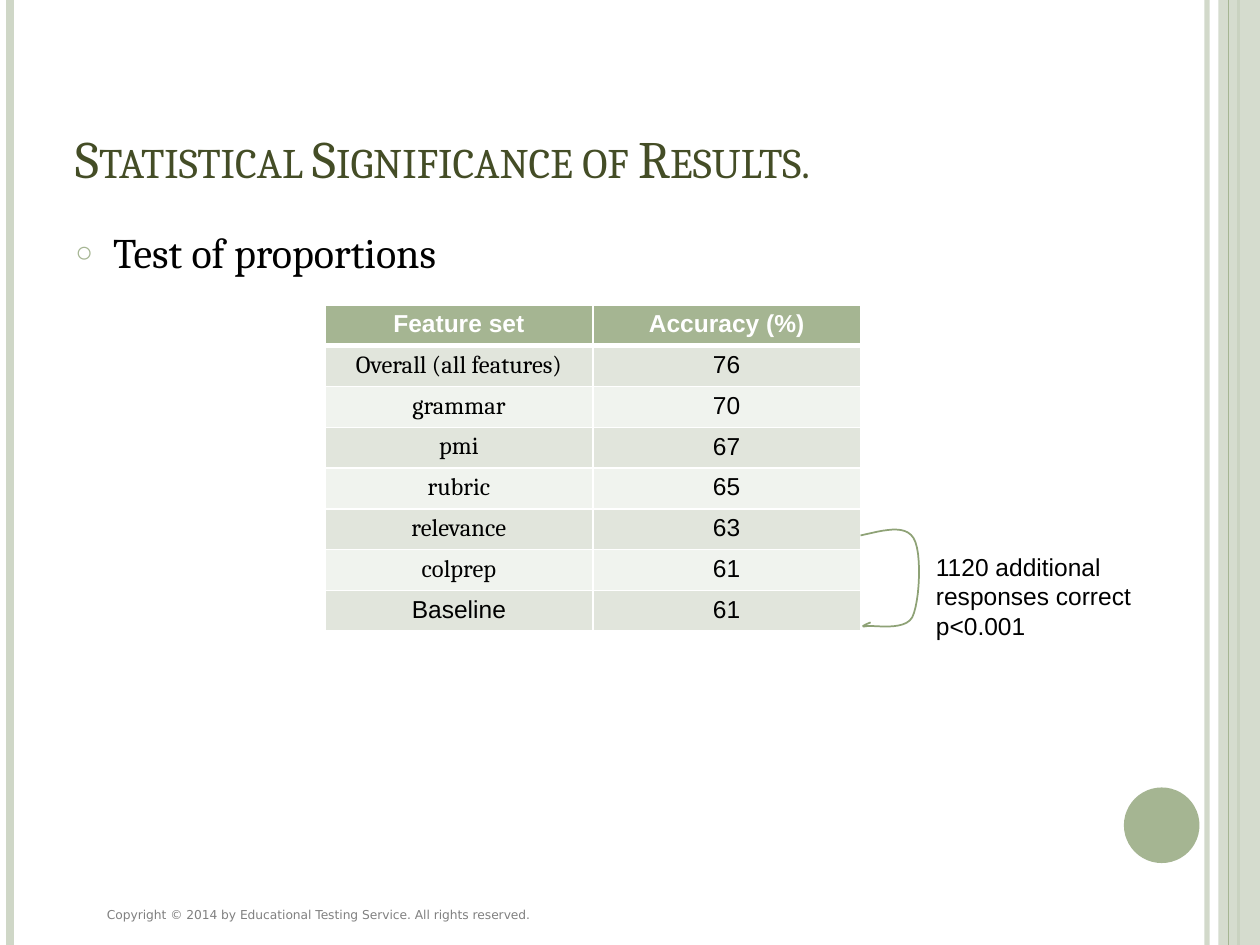
from lxml.etree import SubElement
from pptx import Presentation
from pptx.dml.color import RGBColor
from pptx.enum.shapes import MSO_CONNECTOR, MSO_SHAPE
from pptx.enum.text import MSO_ANCHOR, PP_ALIGN
from pptx.oxml.ns import qn
from pptx.util import Inches, Pt

SAGE = RGBColor(0xA5, 0xB5, 0x92)
PALE_SAGE = RGBColor(0xCF, 0xD7, 0xC7)
OLIVE = RGBColor(0x44, 0x4D, 0x26)
ARROW_GREEN = RGBColor(0x8E, 0xA2, 0x76)
BAND_DARK = RGBColor(0xE1, 0xE5, 0xDC)
BAND_LIGHT = RGBColor(0xF0, 0xF3, 0xEE)
GRAY = RGBColor(0x80, 0x80, 0x80)
BLACK = RGBColor(0, 0, 0)
WHITE = RGBColor(0xFF, 0xFF, 0xFF)

# x, colour, width in points, opacity in percent
RULES_BEHIND = [(9.58, PALE_SAGE, 3, 93), (0.08, PALE_SAGE, 4.5, 100),
                (9.83, SAGE, 1.5, 100)]
RULE_IN_FRONT = (9.75, SAGE, 0.75, 100)

TITLE = "Statistical Significance of Results."
BULLET = "Test of proportions"
COPYRIGHT = "Copyright © 2014 by Educational Testing Service. All rights reserved."
NOTE = ["1120 additional responses correct", "p<0.001"]
RESULTS = [
    ("Feature set", "Accuracy (%)"),
    ("Overall (all features)", "76"),
    ("grammar", "70"),
    ("pmi", "67"),
    ("rubric", "65"),
    ("relevance", "63"),
    ("colprep", "61"),
    ("Baseline", "61"),
]
ARROW_START = (6.83, 4.25)
ARROW_CURVES = [  # two control points and an end point each; the last is the head
    ((7.01, 4.21), (7.18, 4.16), (7.25, 4.27)),
    ((7.32, 4.38), (7.30, 4.78), (7.24, 4.90)),
    ((7.18, 5.01), (6.93, 4.96), (6.88, 4.97)),
    ((6.82, 4.98), (6.86, 4.96), (6.91, 4.94)),
]
CURVE_STEPS = 12


def write(p, text, color, **font):
    r = p.add_run()
    r.text = text
    r.font.color.rgb = color
    for name, value in font.items():
        setattr(r.font, name, value)
    return r


def add_text_box(s, box, lines, color, anchor=MSO_ANCHOR.TOP, **font):
    tf = s.shapes.add_textbox(*map(Inches, box)).text_frame
    tf.word_wrap = True
    tf.vertical_anchor = anchor
    for i, line in enumerate(lines):
        p = tf.add_paragraph() if i else tf.paragraphs[0]
        write(p, line, color, **font)
    return tf


def set_opacity(element, percent):
    for clr in element.iter(qn("a:srgbClr")):
        SubElement(clr, qn("a:alpha"), val=str(percent * 1000))


def add_rule(s, x, color, width, opacity):
    """Draw a line down the full height of the slide."""
    rule = s.shapes.add_connector(MSO_CONNECTOR.STRAIGHT, Inches(x), 0,
                                  Inches(x), Inches(7.5))
    rule.line.color.rgb = color
    rule.line.width = Pt(width)
    sp_pr = rule._element.spPr
    if opacity < 100:
        set_opacity(sp_pr, opacity)
    SubElement(sp_pr, qn("a:effectLst"))


def add_plain_shape(s, kind, box, color):
    sp = s.shapes.add_shape(kind, *map(Inches, box))
    sp.shadow.inherit = False
    sp.fill.solid()
    sp.fill.fore_color.rgb = color
    sp.line.fill.background()
    return sp


def add_bullet(p):
    p_pr = p._p.get_or_add_pPr()
    p_pr.set("marL", str(Inches(0.3)))
    p_pr.set("indent", str(-Inches(0.3)))
    SubElement(SubElement(p_pr, qn("a:buClr")), qn("a:srgbClr"), val=str(SAGE))
    SubElement(p_pr, qn("a:buSzPct"), val="70000")
    SubElement(p_pr, qn("a:buFont"), typeface="Arial")
    SubElement(p_pr, qn("a:buChar"), char="○")


def set_borders(cell, bottom):
    tc_pr = cell._tc.get_or_add_tcPr()
    for side, width in {"L": 1, "R": 1, "T": 1, "B": bottom}.items():
        ln = SubElement(tc_pr, qn(f"a:ln{side}"), w=str(Pt(width)))
        SubElement(SubElement(ln, qn("a:solidFill")), qn("a:srgbClr"), val=str(WHITE))


def add_results_table(s):
    frame = s.shapes.add_table(len(RESULTS), 2, Inches(2.58), Inches(2.42),
                               Inches(4.25), Inches(0.3 * len(RESULTS)))
    last = len(RESULTS) - 1
    for i, row in enumerate(RESULTS):
        header = i == 0
        fill = SAGE if header else BAND_DARK if i % 2 else BAND_LIGHT
        for j, text in enumerate(row):
            cell = frame.table.cell(i, j)
            cell.margin_top = cell.margin_bottom = Inches(0.045)
            set_borders(cell, 3 if header else 1)
            cell.fill.solid()
            cell.fill.fore_color.rgb = fill
            p = cell.text_frame.paragraphs[0]
            p.alignment = PP_ALIGN.CENTER
            feature_name = j == 0 and 0 < i < last
            write(p, text, WHITE if header else BLACK, size=Pt(14), bold=header,
                  name="Cambria" if feature_name else "Arial")


def bezier(points, t):
    """Return the point at t on a cubic curve, in EMU."""
    weights = ((1 - t) ** 3, 3 * t * (1 - t) ** 2, 3 * t * t * (1 - t), t ** 3)
    return tuple(Inches(sum(w * pt[k] for w, pt in zip(weights, points)))
                 for k in (0, 1))


def add_curved_arrow(s):
    points, start = [], ARROW_START
    for curve in ARROW_CURVES:
        points += [bezier((start, *curve), n / CURVE_STEPS)
                   for n in range(1, CURVE_STEPS + 1)]
        start = curve[-1]
    builder = s.shapes.build_freeform(*map(Inches, ARROW_START))
    builder.add_line_segments(points, close=False)
    arrow = builder.convert_to_shape()
    arrow.shadow.inherit = False
    arrow.fill.background()
    arrow.line.color.rgb = ARROW_GREEN
    arrow.line.width = Pt(1)


def main():
    prs = Presentation()
    prs.slide_width, prs.slide_height = Inches(10), Inches(7.5)
    s = prs.slides.add_slide(prs.slide_layouts[6])

    for rule in RULES_BEHIND:
        add_rule(s, *rule)
    band = add_plain_shape(s, MSO_SHAPE.RECTANGLE, (9.67, 0, 0.33, 7.5), PALE_SAGE)
    set_opacity(band._element.spPr, 87)
    add_rule(s, *RULE_IN_FRONT)
    add_plain_shape(s, MSO_SHAPE.OVAL, (8.92, 6.25, 0.6, 0.6), SAGE)

    add_text_box(s, (0.75, 7.15, 6.25, 0.22), [COPYRIGHT], GRAY,
                 size=Pt(7), name="DejaVu Sans")
    title = add_text_box(s, (0.5, 0.3, 8.17, 1.25), [TITLE], OLIVE,
                         MSO_ANCHOR.BOTTOM, size=Pt(30), name="Cambria")
    title.paragraphs[0].runs[0].font._element.set("cap", "small")
    body = add_text_box(s, (0.5, 1.75, 8.17, 5.33), [BULLET], BLACK,
                        size=Pt(24), name="Cambria")
    add_bullet(body.paragraphs[0])

    add_results_table(s)
    add_curved_arrow(s)
    add_text_box(s, (7.33, 4.33, 2.17, 0.81), NOTE, BLACK,
                 size=Pt(14), name="Arial")
    prs.save("out.pptx")


if __name__ == "__main__":
    main()
